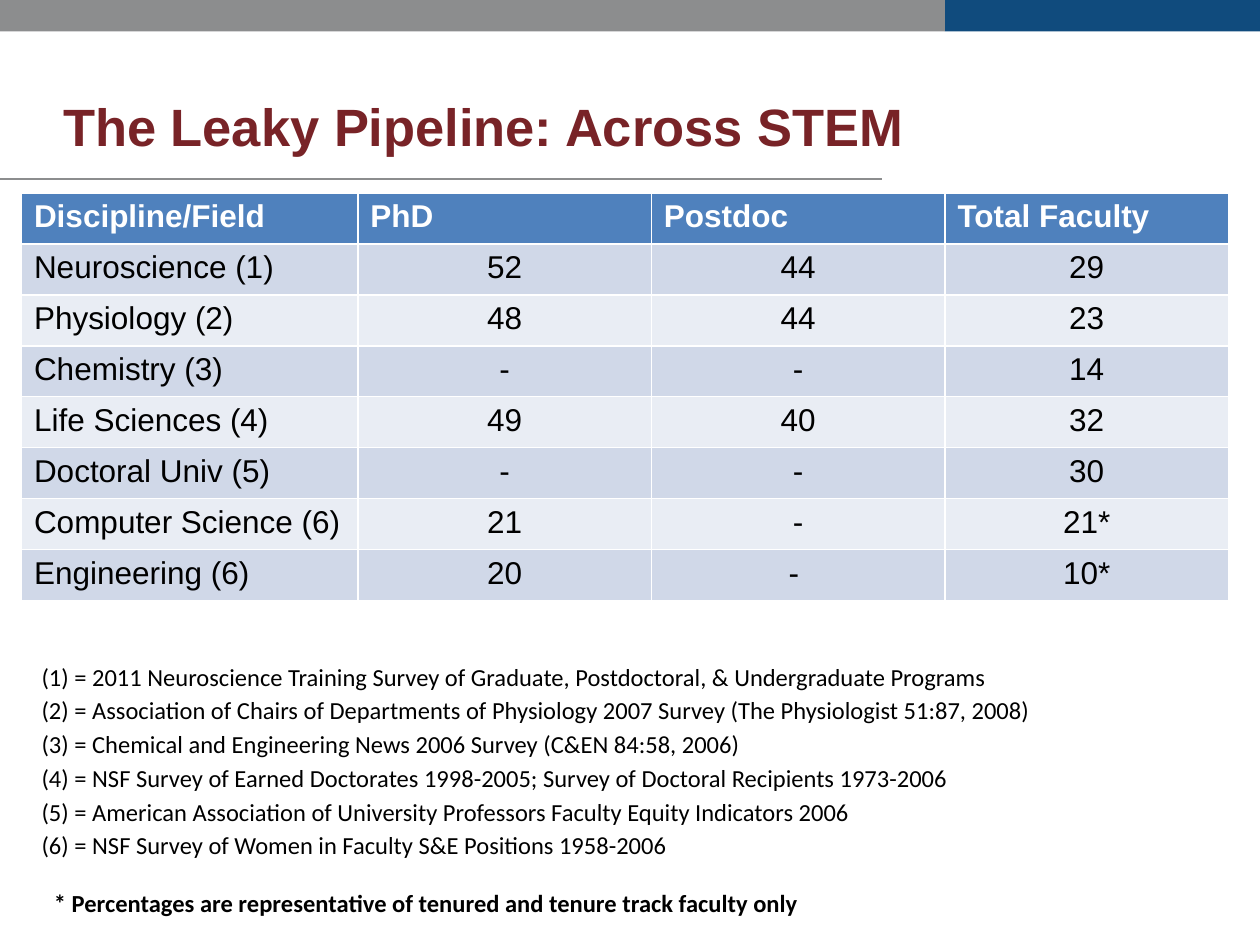
import pptx
import pptx.dml.color
import pptx.enum.shapes
import pptx.enum.text
import pptx.oxml.ns
import pptx.util
from lxml import etree
from pptx.util import Inches

ALIGN = pptx.enum.text.PP_ALIGN
ANCHOR = pptx.enum.text.MSO_ANCHOR
qn = pptx.oxml.ns.qn

HEADINGS = ["Discipline/Field", "PhD", "Postdoc", "Total Faculty"]
FIELDS = [
    ["Neuroscience (1)", "52", "44", "29"],
    ["Physiology (2)", "48", "44", "23"],
    ["Chemistry (3)", "-", "-", "14"],
    ["Life Sciences (4)", "49", "40", "32"],
    ["Doctoral Univ (5)", "-", "-", "30"],
    ["Computer Science (6)", "21", "-", "21*"],
    ["Engineering (6)", "20", "- ", "10*"],
]
SOURCES = [
    "(1) = 2011 Neuroscience Training Survey of Graduate, Postdoctoral, & Undergraduate Programs",
    "(2) = Association of Chairs of Departments of Physiology 2007 Survey (The Physiologist 51:87, 2008)",
    "(3) = Chemical and Engineering News 2006 Survey (C&EN 84:58, 2006)",
    "(4) = NSF Survey of Earned Doctorates 1998-2005; Survey of Doctoral Recipients 1973-2006",
    "(5) = American Association of University Professors Faculty Equity Indicators 2006",
    "(6) = NSF Survey of Women in Faculty S&E Positions 1958-2006",
]


def rgb(value):
    return pptx.dml.color.RGBColor.from_string(value)


class SlideBuilder:
    gray, blue, maroon = "8C8D8E", "104B7D", "782327"
    header_fill, bands = "4F81BD", ("D0D8E8", "E9EDF4")
    black, white = "000000", "FFFFFF"
    heading_font, note_font = "Arial", "Calibri"

    def __init__(self, slide):
        self.slide = slide

    def run(self, paragraph, text, font, size, color, bold=False):
        run = paragraph.add_run()
        run.text = text
        run.font.name = font
        run.font.size = pptx.util.Pt(size)
        run.font.bold = bold
        run.font.color.rgb = rgb(color)

    def bar(self, left, width, color):
        bar = self.slide.shapes.add_shape(
            pptx.enum.shapes.MSO_SHAPE.RECTANGLE,
            Inches(left), 0, Inches(width), Inches(0.25))
        bar.shadow.inherit = False
        bar.fill.solid()
        bar.fill.fore_color.rgb = rgb(color)
        bar.line.fill.background()

    def rule(self, y, width):
        rule = self.slide.shapes.add_connector(
            pptx.enum.shapes.MSO_CONNECTOR.STRAIGHT,
            0, Inches(y), Inches(width), Inches(y))
        rule.line.color.rgb = rgb(self.gray)
        rule.line.width = pptx.util.Pt(0.75)
        etree.SubElement(rule._element.spPr, qn("a:effectLst"))

    def place(self, placeholder, left, top, width, height, anchor):
        placeholder.left, placeholder.top = Inches(left), Inches(top)
        placeholder.width, placeholder.height = Inches(width), Inches(height)
        frame = placeholder.text_frame
        frame.margin_left = frame.margin_right = 0
        frame.margin_top = frame.margin_bottom = 0
        frame.vertical_anchor = anchor
        frame.auto_size = pptx.enum.text.MSO_AUTO_SIZE.NONE
        frame.word_wrap = True
        return frame

    def title(self, text):
        frame = self.place(self.slide.shapes.title, 0.5, 0.75, 6.75, 0.5, ANCHOR.MIDDLE)
        heading = frame.paragraphs[0]
        heading.alignment = ALIGN.LEFT
        self.run(heading, text, self.heading_font, 30, self.maroon, True)

    def sources(self, lines):
        frame = self.place(self.slide.placeholders[1], 0.33, 5.25, 8.75, 1.67, ANCHOR.TOP)
        for number, line in enumerate(lines):
            source = frame.add_paragraph() if number else frame.paragraphs[0]
            properties = source._p.get_or_add_pPr()
            properties.set("marL", "0")
            properties.set("indent", "0")
            etree.SubElement(properties, qn("a:buNone"))
            source.space_before = pptx.util.Pt(2.5 if number else 0)
            self.run(source, line, self.note_font, 14, self.black)

    def table(self, headings, rows, widths):
        table = self.slide.shapes.add_table(
            len(rows) + 1, len(headings), Inches(0.17), Inches(1.53),
            Inches(sum(widths)), Inches(3.24)).table
        for column, width in zip(table.columns, widths):
            column.width = Inches(width)
        for r, values in enumerate([headings] + rows):
            is_header = r == 0
            for c, value in enumerate(values):
                cell = table.cell(r, c)
                cell.fill.solid()
                cell.fill.fore_color.rgb = rgb(
                    self.header_fill if is_header else self.bands[(r - 1) % 2])
                entry = cell.text_frame.paragraphs[0]
                entry.alignment = ALIGN.LEFT if is_header or c == 0 else ALIGN.CENTER
                self.run(entry, value, self.heading_font, 18,
                         self.white if is_header else self.black, is_header)

    def footnote(self, text):
        frame = self.slide.shapes.add_textbox(
            Inches(0.33), Inches(7), Inches(6.83), Inches(0.34)).text_frame
        frame.word_wrap = True
        frame.auto_size = pptx.enum.text.MSO_AUTO_SIZE.SHAPE_TO_FIT_TEXT
        self.run(frame.paragraphs[0], text, self.note_font, 14, self.black, True)


def main():
    deck = pptx.Presentation()
    deck.slide_width, deck.slide_height = Inches(10), Inches(7.5)
    page = SlideBuilder(deck.slides.add_slide(deck.slide_layouts[1]))
    page.rule(1.42, 7)
    page.bar(7.5, 2.5, page.blue)
    page.bar(0, 7.5, page.gray)
    page.title("The Leaky Pipeline: Across STEM")
    page.sources(SOURCES)
    page.table(HEADINGS, FIELDS, [2.67, 2.33, 2.33, 2.25])
    page.footnote("* Percentages are representative of tenured and tenure track faculty only")
    deck.save("out.pptx")


if __name__ == "__main__":
    main()
